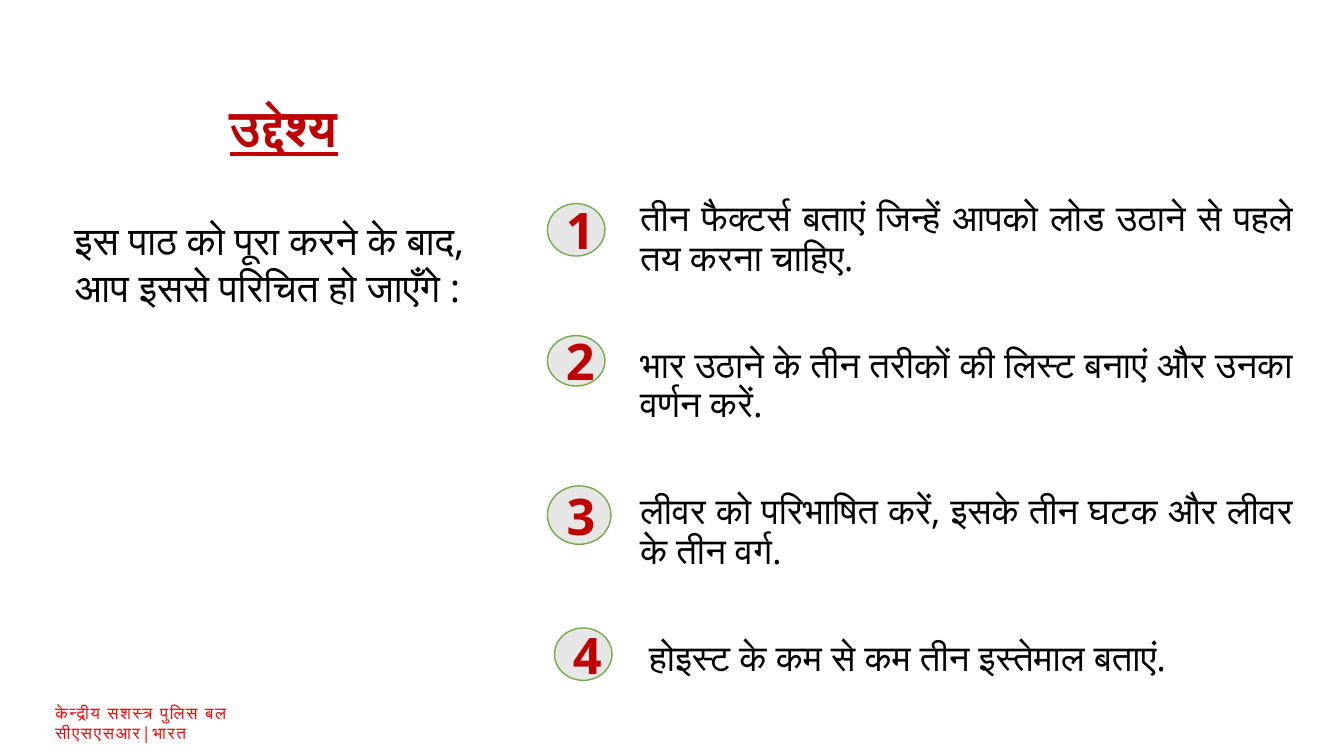
from dataclasses import dataclass
from pptx import Presentation
from pptx.dml.color import RGBColor
from pptx.enum.shapes import MSO_SHAPE
from pptx.enum.text import MSO_ANCHOR, PP_ALIGN
from pptx.util import Inches, Pt


@dataclass
class Theme:
    font: str = "Open Sans"
    ink: str = "000000"
    accent: str = "C00000"
    foot: str = "FF0000"
    disc: str = "E7E6E6"
    rim: str = "70AD47"
    head_size: int = 36
    lead_size: int = 28
    goal_size: int = 26
    foot_size: int = 12


THEME = Theme()
GOALS = [
    "तीन फैक्टर्स बताएं जिन्हें आपको लोड उठाने से पहले तय करना चाहिए.",
    "भार उठाने के तीन तरीकों की लिस्ट बनाएं और उनका वर्णन करें.",
    "लीवर को परिभाषित करें, इसके तीन घटक और लीवर के तीन वर्ग.",
    "होइस्ट के कम से कम तीन इस्तेमाल बताएं.",
]
DISCS = [
    (5.43, 2.02, 0.57, 0.52),
    (5.43, 3.33, 0.57, 0.5),
    (5.43, 4.82, 0.63, 0.58),
    (5.5, 6.23, 0.57, 0.52),
]


def style(para, size, color, bold=False):
    for run in para.runs:
        font = run.font
        font.name, font.size, font.bold = THEME.font, Pt(size), bold
        font.color.rgb = RGBColor.from_string(color)


def add_text(slide, box, lines, size, color, bold=False):
    frame = slide.shapes.add_textbox(*map(Inches, box)).text_frame
    frame.word_wrap = True
    frame.text = "\n".join(lines)
    for para in frame.paragraphs:
        style(para, size, color, bold)
    return frame


def add_head(slide, box):
    frame = add_text(slide, box, ["उद्देश्य"], THEME.head_size, THEME.accent, True)
    frame.vertical_anchor = MSO_ANCHOR.MIDDLE
    para = frame.paragraphs[0]
    para.alignment, para.line_spacing = PP_ALIGN.CENTER, 0.9
    para.runs[0].font.underline = True


def add_lead(slide, box):
    text = "इस पाठ को पूरा करने के बाद, आप इससे परिचित हो जाएँगे :"
    add_text(slide, box, [text], THEME.lead_size, THEME.ink)


def add_goals(slide, box):
    frame = add_text(slide, box, GOALS, THEME.goal_size, THEME.ink)
    for i, para in enumerate(frame.paragraphs):
        para.alignment, para.line_spacing = PP_ALIGN.JUSTIFY, 0.9
        para.space_before = Pt(48.5 if i else 0)
    para._p.get_or_add_pPr().set("marL", str(Inches(0.09)))


def add_disc(slide, box, label):
    disc = slide.shapes.add_shape(MSO_SHAPE.OVAL, *map(Inches, box))
    disc.shadow.inherit = False
    disc.fill.solid()
    disc.fill.fore_color.rgb = RGBColor.from_string(THEME.disc)
    disc.line.color.rgb = RGBColor.from_string(THEME.rim)
    disc.line.width = Pt(1)
    frame = disc.text_frame
    frame.text = label
    frame.vertical_anchor = MSO_ANCHOR.MIDDLE
    frame.paragraphs[0].alignment = PP_ALIGN.CENTER
    style(frame.paragraphs[0], THEME.head_size, THEME.accent, True)


def add_foot(slide, box):
    text = "केन्द्रीय सशस्त्र पुलिस बल सीएसएसआर|भारत"
    frame = add_text(slide, box, [text], THEME.foot_size, THEME.foot)
    frame.margin_left = frame.margin_right = Inches(0.04)
    frame.margin_top = frame.margin_bottom = Inches(0.04)
    frame.paragraphs[0].runs[0].font._element.set("spc", "120")


def main():
    deck = Presentation()
    deck.slide_width, deck.slide_height = Inches(13.33), Inches(7.5)
    slide = deck.slides.add_slide(deck.slide_layouts[6])
    add_foot(slide, (0.51, 6.93, 2.54, 0.29))
    add_head(slide, (0.38, 0.99, 4.87, 0.6))
    add_lead(slide, (0.64, 2.1, 4.22, 1.51))
    add_goals(slide, (6.25, 1.94, 6.67, 5.59))
    for i, box in enumerate(DISCS, 1):
        add_disc(slide, box, str(i))
    deck.save("out.pptx")


if __name__ == "__main__":
    main()
